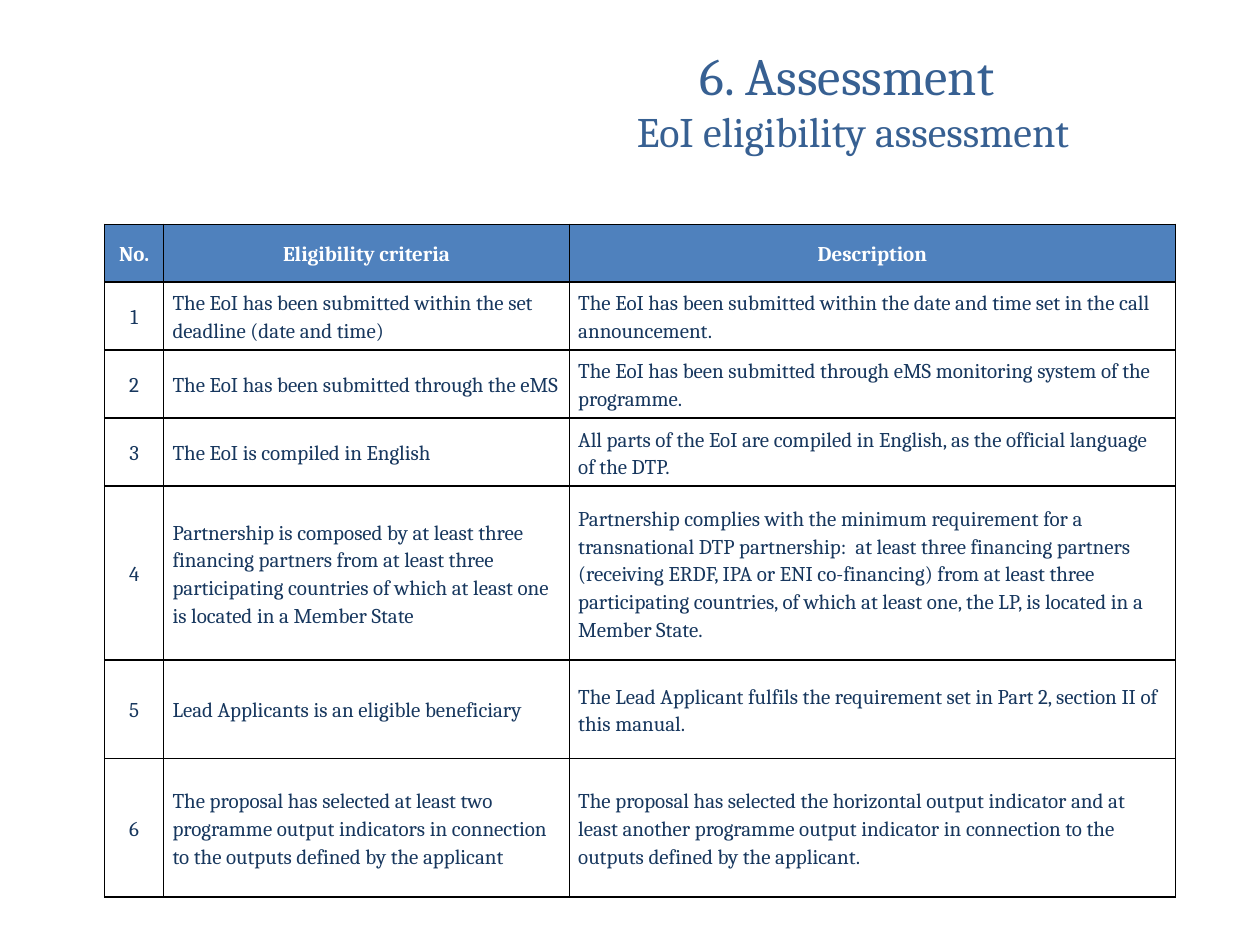
from lxml.etree import SubElement as Sub
from pptx import Presentation
from pptx.dml.color import RGBColor as RGB
from pptx.enum.text import MSO_ANCHOR as Anchor, MSO_AUTO_SIZE as Auto, PP_ALIGN as Align
from pptx.oxml.ns import qn
from pptx.util import Inches, Pt

BLUE = RGB(0x37, 0x60, 0x92)
NAVY = RGB(0x17, 0x37, 0x5E)
HEAD = RGB(0x4F, 0x81, 0xBD)
WHITE = RGB(0xFF, 0xFF, 0xFF)
BLACK = RGB(0, 0, 0)

COLS = [0.47, 3.22, 4.81]
ROWS = [0.46, 0.54, 0.54, 0.54, 1.38, 0.78, 1.1]
LABELS = ("No.", "Eligibility criteria", "Description")
ITEMS = [
    ("The EoI has been submitted within the set deadline (date and time)",
     "The EoI has been submitted within the date and time set in the call announcement."),
    ("The EoI has been submitted through the eMS",
     "The EoI has been submitted through eMS monitoring system of the programme."),
    ("The EoI is compiled in English",
     "All parts of the EoI are compiled in English, as the official language of the DTP."),
    ("Partnership is composed by at least three financing partners from at least three "
     "participating countries of which at least one is located in a Member State",
     "Partnership complies with the minimum requirement for a transnational DTP partnership:  "
     "at least three financing partners (receiving ERDF, IPA or ENI co-financing) from at least "
     "three participating countries, of which at least one, the LP, is located in a Member State."),
    ("Lead Applicants is an eligible beneficiary",
     "The Lead Applicant fulfils the requirement set in Part 2, section II of this manual."),
    ("The proposal has selected at least two programme output indicators in connection "
     "to the outputs defined by the applicant",
     "The proposal has selected the horizontal output indicator and at least another programme "
     "output indicator in connection to the outputs defined by the applicant."),
]


def write(para, text, size=12, color=NAVY, bold=False, align=Align.LEFT, space=1.0):
    para.alignment = align
    para.line_spacing = space
    run = para.add_run()
    run.text = text
    font = run.font
    font.name, font.size, font.bold = "Cambria", Pt(size), bold
    font.color.rgb = color


def add_title(slide):
    title = slide.shapes.title
    title.left, title.top = Inches(3.74), Inches(0.29)
    title.width, title.height = Inches(6.06), Inches(0.79)
    frame = title.text_frame
    frame.word_wrap = True
    frame.auto_size = Auto.NONE
    frame.vertical_anchor = Anchor.TOP
    write(frame.paragraphs[0], "6. Assessment ", size=30, color=BLUE, align=Align.CENTER)
    write(frame.add_paragraph(), "EoI eligibility assessment", size=24, color=BLUE,
          align=Align.CENTER)


def add_edges(cell):
    props = cell._tc.get_or_add_tcPr()
    for side in ("lnL", "lnR", "lnT", "lnB"):
        line = Sub(props, qn(f"a:{side}"), w=str(Pt(1)))
        fill = Sub(line, qn("a:solidFill"))
        Sub(fill, qn("a:srgbClr"), val=str(BLACK))


def fill_cell(cell, text, fill, **style):
    cell.margin_left = cell.margin_right = Inches(0.07)
    cell.margin_top = cell.margin_bottom = 0
    cell.vertical_anchor = Anchor.MIDDLE
    add_edges(cell)
    cell.fill.solid()
    cell.fill.fore_color.rgb = fill
    write(cell.text_frame.paragraphs[0], text, space=1.15, **style)


def add_grid(slide):
    frame = slide.shapes.add_table(len(ROWS), len(COLS), Inches(0.83), Inches(1.78),
                                   Inches(sum(COLS)), Inches(sum(ROWS)))
    table = frame.table
    table.first_row = table.horz_banding = False
    for col, width in zip(table.columns, COLS):
        col.width = Inches(width)
    for row, height in zip(table.rows, ROWS):
        row.height = Inches(height)

    # Header row
    for cell, label in zip(table.rows[0].cells, LABELS):
        fill_cell(cell, label, HEAD, color=WHITE, bold=True, align=Align.CENTER)

    # Numbered criteria
    for num, item in enumerate(ITEMS, 1):
        first, *rest = table.rows[num].cells
        fill_cell(first, str(num), WHITE, align=Align.CENTER)
        for cell, text in zip(rest, item):
            fill_cell(cell, text, WHITE)


def main():
    deck = Presentation()
    deck.slide_width, deck.slide_height = Inches(10), Inches(7.5)
    slide = deck.slides.add_slide(deck.slide_layouts[5])
    add_title(slide)
    add_grid(slide)
    deck.save("out.pptx")


if __name__ == "__main__":
    main()
